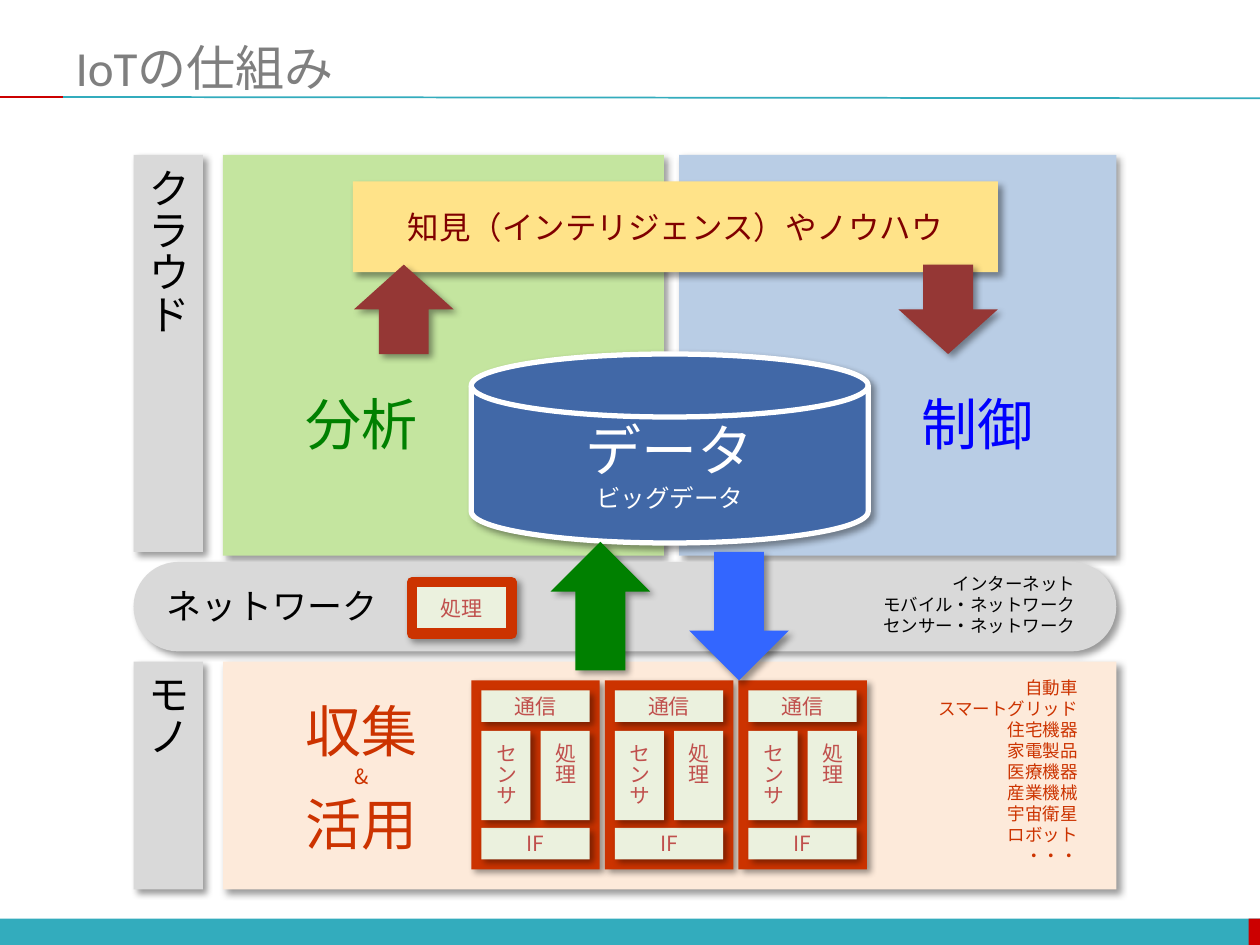
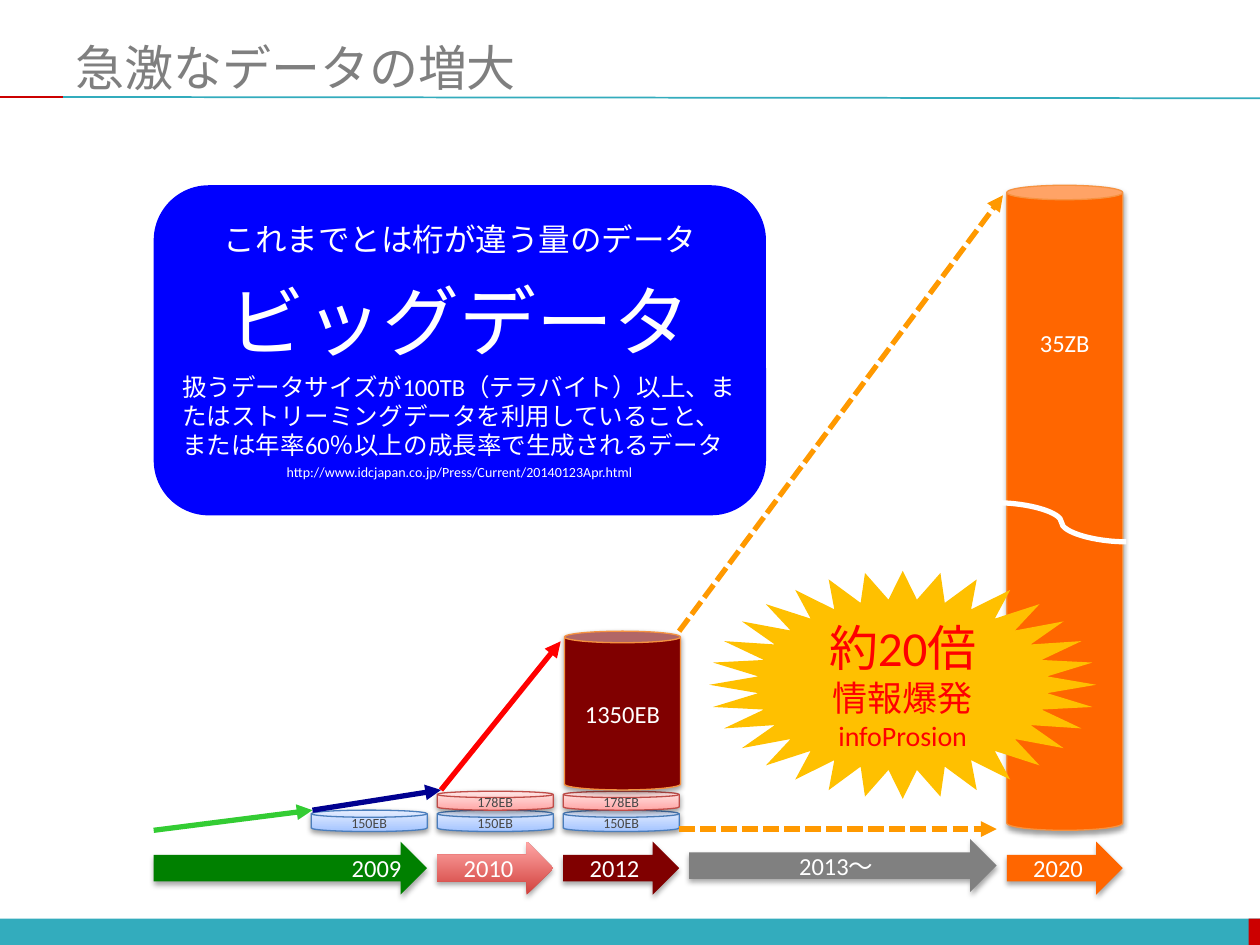
import pptx
import pptx.dml.color
import pptx.enum.dml
import pptx.enum.lang
import pptx.enum.shapes
import pptx.enum.text
import pptx.oxml.ns
import pptx.util
from lxml import etree

Inches = pptx.util.Inches
Pt = pptx.util.Pt
SHAPE = pptx.enum.shapes.MSO_SHAPE
CONNECTOR = pptx.enum.shapes.MSO_CONNECTOR
ALIGN = pptx.enum.text.PP_ALIGN
ANCHOR = pptx.enum.text.MSO_ANCHOR
qn = pptx.oxml.ns.qn

LATIN, JAPANESE = "Calibri", "Noto Sans CJK JP"
COLORS = {
    "teal": "33ACBD", "band_red": "CC0000", "title": "7F7F7F", "white": "FFFFFF",
    "black": "000000", "analysis": "C4E59F", "control": "B9CDE5", "things": "FDEADA",
    "label": "D9D9D9", "rust": "CC3300", "module": "EBF1DE", "module_text": "C0504D",
    "data": "4168A7", "insight": "FFE389", "maroon": "800000", "green": "008000",
    "sky": "3366FF", "blue": "0000FF", "brick": "953735", "lime": "33CC33",
    "navy": "000090", "red": "FF0000", "orange": "FF6600", "can_edge": "F69240",
    "dash": "FF9900", "gray": "808080", "burst": "FFC000", "volume_text": "484848",
    "ice": "A4C4FF", "ice_light": "E6EEFF", "ice_edge": "4B7EBC",
    "rose": "FFA6A5", "rose_light": "FFE7E7", "rose_edge": "BF4C48", "rose_dark": "D1403C",
}
PANEL_SHADOW = dict(alpha=40, blur=4, dist=3, angle=45)
VOLUME_SHADOW = dict(alpha=38, blur=3.1, dist=1.6, angle=90)
YEAR_SHADOW = dict(alpha=35, blur=3.1, dist=1.8, angle=90)


def rgb(name):
    return pptx.dml.color.RGBColor.from_string(COLORS[name])


def write(frame, text, size=12, color="black", font=JAPANESE, align=ALIGN.CENTER,
          anchor=ANCHOR.MIDDLE, wrap=True, sizes=None, fonts=None, aligns=None,
          gap=0, top=0.05, vertical=False):
    frame.word_wrap = wrap
    frame.vertical_anchor = anchor
    frame.margin_top = Inches(top)
    if vertical:
        frame._txBody.bodyPr.set("vert", "eaVert")
    for index, line in enumerate(text.split("\n")):
        paragraph = frame.paragraphs[0] if index == 0 else frame.add_paragraph()
        line_size = sizes[index] if sizes else size
        paragraph.alignment = aligns[index] if aligns else align
        if index and gap:
            paragraph.space_before = Pt(round(line_size * gap))
        run = paragraph.add_run()
        run.text = line
        run.font.size = Pt(line_size)
        run.font.color.rgb = rgb(color)
        run.font.name = fonts[index] if fonts else font
        run.font.language_id = pptx.enum.lang.MSO_LANGUAGE_ID.JAPANESE
        etree.SubElement(run._r.rPr, qn("a:ea"), typeface=JAPANESE)


def cast_shadow(shape, alpha, blur, dist, angle):
    effects = shape.element.spPr.find(qn("a:effectLst"))
    outer = etree.SubElement(effects, qn("a:outerShdw"), blurRad=str(Pt(blur)),
                             dist=str(Pt(dist)), dir=str(angle * 60000),
                             algn="ctr", rotWithShape="0")
    tint = etree.SubElement(outer, qn("a:srgbClr"), val=COLORS["black"])
    etree.SubElement(tint, qn("a:alpha"), val=str(alpha * 1000))


def draw(slide, kind, box, fill, edge=None, edge_width=0.75, shadow=None, adjust=None,
         text=None, **text_format):
    shape = slide.shapes.add_shape(kind, *map(Inches, box))
    shape.shadow.inherit = False
    if shadow:
        cast_shadow(shape, **shadow)
    if isinstance(fill, tuple):
        shape.fill.gradient()
        shape.fill.gradient_angle = 90
        for stop, name in zip(shape.fill.gradient_stops, fill):
            stop.color.rgb = rgb(name)
    else:
        shape.fill.solid()
        shape.fill.fore_color.rgb = rgb(fill)
    if edge:
        shape.line.color.rgb = rgb(edge)
        shape.line.width = Pt(edge_width)
    else:
        shape.line.fill.background()
    if adjust is not None:
        shape.adjustments[0] = adjust
    if text:
        write(shape.text_frame, text, **text_format)
    return shape


def panel(slide, box, fill, kind=SHAPE.RECTANGLE, **options):
    return draw(slide, kind, box, fill, shadow=PANEL_SHADOW, **options)


def caption(slide, box, text, wrap=False, **text_format):
    textbox = slide.shapes.add_textbox(*map(Inches, box))
    write(textbox.text_frame, text, wrap=wrap, anchor=ANCHOR.TOP, **text_format)


def connect(slide, start, end, color, width=3, kind=CONNECTOR.STRAIGHT,
            arrow=False, dashed=False):
    connector = slide.shapes.add_connector(kind, *map(Inches, (*start, *end)))
    connector.line.color.rgb = rgb(color)
    connector.line.width = Pt(width)
    if dashed:
        connector.line.dash_style = pptx.enum.dml.MSO_LINE.SQUARE_DOT
    if arrow:
        etree.SubElement(connector.line._get_or_add_ln(), qn("a:tailEnd"), type="triangle")
    etree.SubElement(connector.element.spPr, qn("a:effectLst"))
    return connector


def decorate_layout(layout, slide):
    parts = [
        draw(slide, SHAPE.RECTANGLE, (0, 7.29, 10, 0.21), "teal"),
        draw(slide, SHAPE.RECTANGLE, (9.91, 7.29, 0.09, 0.21), "band_red"),
        connect(slide, (0.5, 0.77), (10, 0.78), "teal", width=1),
        connect(slide, (0, 0.77), (0.5, 0.77), "band_red", width=1),
    ]
    for number, part in enumerate(parts, 101):
        part.element.xpath(".//p:cNvPr")[0].set("id", str(number))
        layout.shapes.element.append(part.element)


def add_titled_slide(deck, layout, title_text):
    slide = deck.slides.add_slide(layout)
    title = slide.shapes.title
    title.left, title.top, title.width, title.height = map(Inches, (0.5, 0.3, 9.5, 0.46))
    title.text_frame.auto_size = pptx.enum.text.MSO_AUTO_SIZE.NONE
    write(title.text_frame, title_text, size=28, color="title", font=LATIN, align=ALIGN.LEFT)
    return slide


def layer_label(slide, box, text):
    panel(slide, box, "label", text=text, size=24, vertical=True, align=ALIGN.LEFT)


def cloud_layer(slide, box):
    x, y, w, h = box
    panel(slide, (x + 0.71, y, 3.5, h), "analysis")
    panel(slide, (x + 4.33, y, w - 4.33, h), "control")
    panel(slide, (x + 2.68, y + 1.58, 3.15, 1.5), "data", SHAPE.FLOWCHART_MAGNETIC_DISK,
          edge="white", edge_width=3, text="データ\nビッグデータ", sizes=(32, 14), color="white")
    panel(slide, (x + 1.74, y + 0.21, 5.12, 0.72), "insight",
          text="知見（インテリジェンス）やノウハウ", size=18, color="maroon")
    for dx, text, color in ((1.26, "分析", "green"), (6.15, "制御", "blue")):
        caption(slide, (x + dx, y + 1.81, 1.1, 0.64), text, size=32, color=color)
    for dx, arrow in ((1.75, SHAPE.UP_ARROW), (6.07, SHAPE.DOWN_ARROW)):
        panel(slide, (x + dx, y + 0.87, 0.79, 0.71), "brick", arrow)
    layer_label(slide, (x, y, 0.55, 3.15), "クラウド")


def network_layer(slide, box):
    x, y, w, h = box
    panel(slide, box, "label", SHAPE.ROUNDED_RECTANGLE, adjust=0.5)
    caption(slide, (x + 0.16, y + 0.13, 1.88, 0.44), "ネットワーク", size=20)
    caption(slide, (x + w - 1.97, y + 0.04, 1.74, 0.61),
            "インターネット\nモバイル・ネットワーク\nセンサー・ネットワーク",
            size=10, align=ALIGN.RIGHT)
    panel(slide, (x + 2.21, y + 0.16, 0.79, 0.41), "module", edge="rust", edge_width=6,
          text="処理", color="module_text")


def device(slide, box):
    x, y, w, h = box
    pad, column = 0.08, 0.39
    panel(slide, box, "rust")
    for dy, text in ((pad, "通信"), (h - pad - 0.25, "IF")):
        panel(slide, (x + pad, y + dy, w - 2 * pad, 0.25), "module", text=text,
              color="module_text")
    for dx, text in ((pad, "センサ"), (w - pad - column, "処理")):
        panel(slide, (x + dx, y + 0.4, column, 0.71), "module", text=text,
              color="module_text", vertical=True, align=ALIGN.LEFT)


def things_layer(slide, box):
    x, y, w, h = box
    panel(slide, (x + 0.71, y, w - 0.71, h), "things")
    for index in range(3):
        device(slide, (x + 2.68 + index * 1.06, y + 0.15, 1.02, 1.5))
    caption(slide, (x + 1.26, y + 0.23, 1.1, 1.38), "収集\n&\n活用", sizes=(32, 12, 32),
            color="rust")
    caption(slide, (x + w - 1.81, y + 0.07, 1.6, 1.62),
            "自動車\nスマートグリッド\n住宅機器\n家電製品\n医療機器\n産業機械\n宇宙衛星\nロボット\n・・・",
            size=10, color="rust", align=ALIGN.RIGHT, wrap=True)
    layer_label(slide, (x, y, 0.55, h), "モノ")


def data_flows(slide, box):
    x, y, w, h = box
    panel(slide, (x, y, 0.79, h), "green", SHAPE.UP_ARROW)
    panel(slide, (x + w - 0.79, y + 0.08, 0.79, h), "sky", SHAPE.DOWN_ARROW)


def year_arrows(slide, box):
    x, y, w, h = box
    years = (
        (0, 2.17, "2009", "green", 0), (2.25, 0.92, "2010", ("rose_dark", "rose"), 0),
        (3.25, 0.92, "2012", "maroon", 0), (6.77, 0.92, "2020", "orange", 0),
        (4.25, 2.44, "2013〜", "gray", -0.02),
    )
    for dx, width, text, fill, dy in years:
        draw(slide, SHAPE.RIGHT_ARROW, (x + dx, y + dy, width, h), fill, shadow=YEAR_SHADOW,
             text=text, size=14, color="white", font=LATIN,
             align=ALIGN.RIGHT if text == "2009" else ALIGN.CENTER)


def data_volumes(slide, box):
    x, y, w, h = box
    bottom = y + h
    layers = (
        ("150EB", 0.17, 0.17, ("ice", "ice_light"), "ice_edge", (0, 1, 2)),
        ("178EB", 0.32, 0.15, ("rose", "rose_light"), "rose_edge", (1, 2)),
    )
    for text, rise, height, fill, edge, columns in layers:
        for column in columns:
            draw(slide, SHAPE.FLOWCHART_MAGNETIC_DISK,
                 (x + 1.25 + column, bottom - rise, 0.92, height), fill, edge=edge,
                 shadow=VOLUME_SHADOW, text=text, size=8, color="volume_text", font=LATIN)
    can_style = dict(edge="can_edge", shadow=VOLUME_SHADOW, size=14, color="white", font=LATIN)
    draw(slide, SHAPE.CAN, (x + 3.26, bottom - 1.59, 0.92, 1.26), "maroon", adjust=0.1,
         text="1350EB", **can_style)
    growth = [(x, bottom - 0.01), (x + 1.26, bottom - 0.17),
              (x + 2.28, bottom - 0.33), (x + 3.23, bottom - 1.51)]
    for start, end, color in zip(growth, growth[1:], ("lime", "navy", "red")):
        connect(slide, start, end, color, arrow=True)
    draw(slide, SHAPE.CAN, (x + w - 0.92, y, 0.92, h - 0.01), "orange", adjust=0.125,
         text="35ZB", anchor=ANCHOR.TOP, top=1.02, **can_style)
    connect(slide, (x + 6.69, y + 2.52), (x + 7.72, y + 2.83), "white", kind=CONNECTOR.CURVE)
    for start, end in (((4.17, 3.54), (6.74, 0.08)), ((4.17, 5.11), (6.69, 5.11))):
        connect(slide, (x + start[0], y + start[1]), (x + end[0], y + end[1]), "dash",
                arrow=True, dashed=True)


def explosion_burst(slide, box):
    draw(slide, SHAPE.STAR_32_POINT, box, "burst", text="約20倍\n情報爆発\ninfoProsion",
         sizes=(28, 20, 16), color="red", font=LATIN)


def big_data_definition(slide, box):
    definition = "扱うデータサイズが100TB（テラバイト）以上、またはストリーミングデータを利用していること、または年率60％以上の成長率で生成されるデータ"
    source = "http://www.idcjapan.co.jp/Press/Current/20140123Apr.html"
    draw(slide, SHAPE.ROUNDED_RECTANGLE, box, "blue", color="white", gap=0.2,
         text="\n".join(("これまでとは桁が違う量のデータ", "ビッグデータ", definition, source)),
         sizes=(18, 44, 14, 8), fonts=(LATIN, JAPANESE, LATIN, LATIN),
         aligns=(ALIGN.CENTER, ALIGN.CENTER, ALIGN.LEFT, ALIGN.CENTER))


def main():
    deck = pptx.Presentation()
    deck.slide_width, deck.slide_height = Inches(10), Inches(7.5)
    layout = deck.slide_layouts[5]

    mechanism = add_titled_slide(deck, layout, "IoTの仕組み")
    decorate_layout(layout, mechanism)
    cloud_layer(mechanism, (1.06, 1.23, 7.8, 3.18))
    network_layer(mechanism, (1.06, 4.46, 7.8, 0.71))
    things_layer(mechanism, (1.06, 5.25, 7.8, 1.81))
    data_flows(mechanism, (4.37, 4.3, 1.89, 1.02))

    growth = add_titled_slide(deck, layout, "急激なデータの増大")
    year_arrows(growth, (1.22, 6.68, 7.69, 0.42))
    data_volumes(growth, (1.22, 1.47, 7.69, 5.13))
    explosion_burst(growth, (5.63, 4.53, 3.07, 1.81))
    big_data_definition(growth, (1.22, 1.47, 4.86, 2.62))

    deck.save("out.pptx")


if __name__ == "__main__":
    main()
